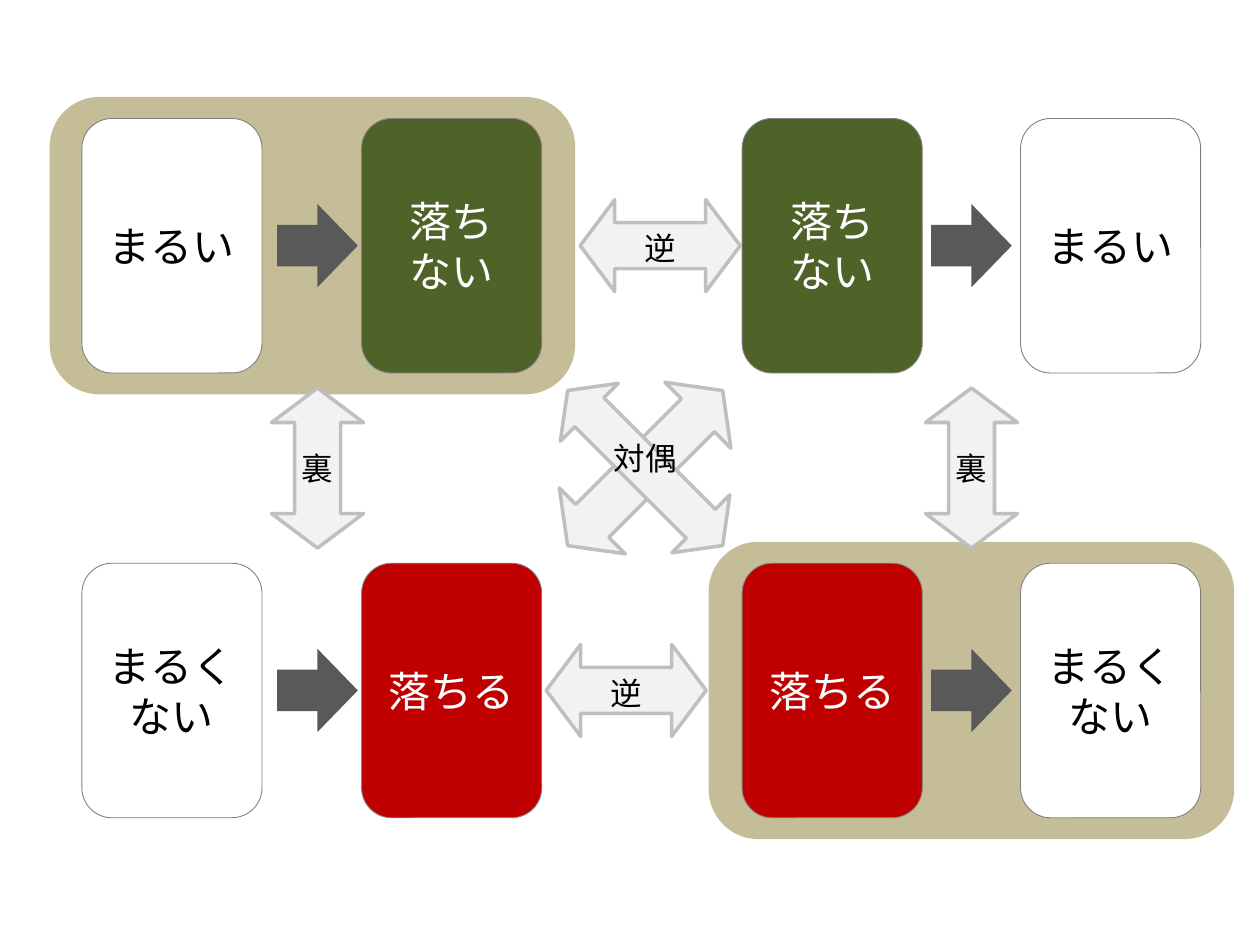
from pptx import Presentation
from pptx.dml.color import RGBColor
from pptx.enum.shapes import MSO_SHAPE
from pptx.enum.text import MSO_ANCHOR, MSO_AUTO_SIZE, PP_ALIGN
from pptx.util import Inches, Pt
from lxml import etree

ROUNDED = MSO_SHAPE.ROUNDED_RECTANGLE
RIGHT_ARROW = MSO_SHAPE.RIGHT_ARROW
DOUBLE_ARROW = MSO_SHAPE.LEFT_RIGHT_ARROW
MIDDLE = MSO_ANCHOR.MIDDLE
GROW = MSO_AUTO_SIZE.SHAPE_TO_FIT_TEXT
CENTER = PP_ALIGN.CENTER
FONT = "Noto Sans CJK JP"
DRAWING_NS = "http://schemas.openxmlformats.org/drawingml/2006/main"

WHITE, BLACK, GREEN, RED = "FFFFFF", "000000", "4F6228", "C00000"
ROUND = ("まるい", WHITE, BLACK)
NOT_ROUND = ("まるくない", WHITE, BLACK)
STAYS = ("落ち\nない", GREEN, WHITE)
FALLS = ("落ちる", RED, WHITE)

STATEMENTS = [
    [(ROUND, STAYS), (STAYS, ROUND)],
    [(NOT_ROUND, FALLS), (FALLS, NOT_ROUND)],
]
HIGHLIGHTED = [(1, 1), (0, 0)]

CARD_LEFTS = [(0.65, 2.87), (5.89, 8.1)]
ROW_MIDDLES = [1.95, 5.48]
IMPLIES_CENTERS = [2.52, 7.71]
FRAME_CENTERS = [2.48, 7.71]
CARD_W, CARD_H = 1.43, 2.02
FRAME_W, FRAME_H = 4.17, 2.36
BETWEEN_ROWS = sum(ROW_MIDDLES) / 2

STRAIGHT = (1.27, 0.73)
RELATIONS = [
    ("逆", 4.97, ROW_MIDDLES[1], 0.45, 0.02, [(*STRAIGHT, 0)]),
    ("裏", IMPLIES_CENTERS[0], BETWEEN_ROWS, 0.45, 0, [(*STRAIGHT, 90)]),
    ("対偶", 5.12, BETWEEN_ROWS, 0.71, -0.08, [(1.74, 0.74, 135), (1.74, 0.65, 45)]),
    ("逆", 5.24, ROW_MIDDLES[0], 0.45, 0.02, [(*STRAIGHT, 0)]),
    ("裏", IMPLIES_CENTERS[1], BETWEEN_ROWS, 0.45, 0, [(*STRAIGHT, 90)]),
]
LABEL_H = 0.4


def color(value):
    return RGBColor.from_string(value)


def centered(x, y, width, height):
    return [Inches(v) for v in (x - width / 2, y - height / 2, width, height)]


def add_figure(shapes, preset, bounds, fill, line=None, line_width=0):
    figure = shapes.add_shape(preset, *bounds)
    figure.shadow.inherit = False
    figure.fill.solid()
    figure.fill.fore_color.rgb = color(fill)
    if line:
        figure.line.color.rgb = color(line)
        figure.line.width = Pt(line_width)
    else:
        figure.line.fill.background()
    return figure


def write(frame, wording, size, ink):
    frame.text = wording
    for paragraph in frame.paragraphs:
        paragraph.alignment = CENTER
        for run in paragraph.runs:
            run.font.size = Pt(size)
            run.font.color.rgb = color(ink)
            run.font.name = FONT
            east_asian = etree.SubElement(run.font._element, f"{{{DRAWING_NS}}}ea")
            east_asian.set("typeface", FONT)


def add_statement(shapes, terms, lefts, implies_x, middle):
    for (wording, fill, ink), left in zip(terms, lefts):
        bounds = centered(left + CARD_W / 2, middle, CARD_W, CARD_H)
        card = add_figure(shapes, ROUNDED, bounds, fill, "808080", 0.5)
        card.text_frame.word_wrap = True
        card.text_frame.vertical_anchor = MIDDLE
        write(card.text_frame, wording, 24, ink)
    add_figure(shapes, RIGHT_ARROW, centered(implies_x, middle, 0.64, 0.66), "595959")


def add_relation(shapes, wording, x, y, label_w, label_shift, arrows):
    group = shapes.add_group_shape()
    for width, height, angle in arrows:
        bounds = centered(x, y, width, height)
        arrow = add_figure(group.shapes, DOUBLE_ARROW, bounds, "F2F2F2", "BFBFBF", 2)
        arrow.adjustments[0], arrow.adjustments[1] = 0.5, 0.375
        arrow.rotation = angle
    label = group.shapes.add_textbox(*centered(x, y + label_shift, label_w, LABEL_H))
    label.text_frame.word_wrap = False
    label.text_frame.auto_size = GROW
    write(label.text_frame, wording, 18, BLACK)


def main():
    deck = Presentation()
    deck.slide_width, deck.slide_height = Inches(10), Inches(7.5)
    shapes = deck.slides.add_slide(deck.slide_layouts[6]).shapes

    for row, column in HIGHLIGHTED:
        bounds = centered(FRAME_CENTERS[column], ROW_MIDDLES[row], FRAME_W, FRAME_H)
        add_figure(shapes, ROUNDED, bounds, "C4BD97")
    for statements, middle in zip(STATEMENTS, ROW_MIDDLES):
        for terms, lefts, implies_x in zip(statements, CARD_LEFTS, IMPLIES_CENTERS):
            add_statement(shapes, terms, lefts, implies_x, middle)
    for relation in RELATIONS:
        add_relation(shapes, *relation)

    deck.save("out.pptx")


if __name__ == "__main__":
    main()
